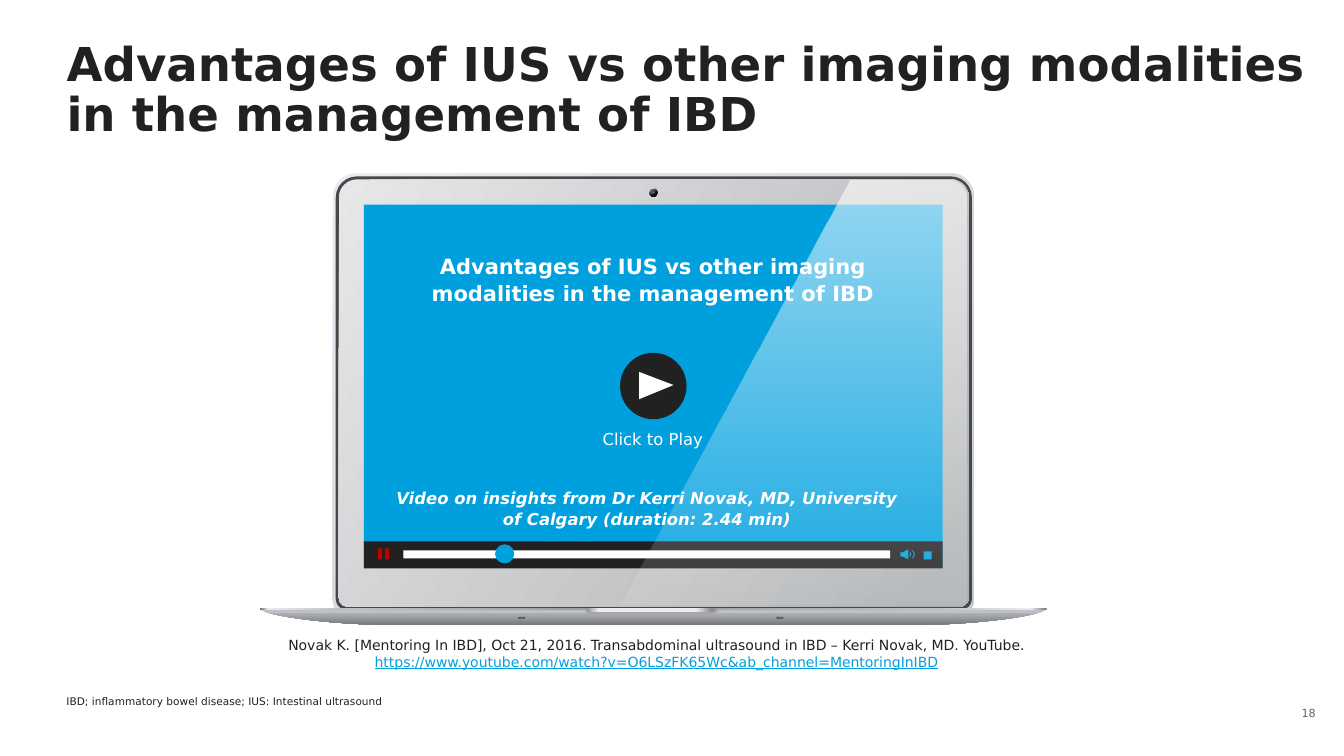
from lxml.etree import SubElement
from pptx import Presentation
from pptx.dml.color import RGBColor
from pptx.enum.shapes import MSO_SHAPE
from pptx.enum.text import MSO_ANCHOR, MSO_AUTO_SIZE, PP_ALIGN
from pptx.oxml.ns import qn
from pptx.util import Inches, Pt

# Content
FONT = "DejaVu Sans"
BLUE, BLACK, WHITE, RED = "00A0DF", "212121", "FFFFFF", "C00000"
TITLE = "Advantages of IUS vs other imaging modalities in the management of IBD"
CITATION = [
    ("Novak K. [Mentoring In IBD], Oct 21, 2016. Transabdominal ultrasound in IBD – "
     "Kerri Novak, MD. YouTube. ", {"size": 10, "color": "202124"}),
    ("https://www.youtube.com/watch?v=O6LSzFK65Wc&ab_channel=MentoringInIBD",
     {"size": 10, "color": "00A0DE", "underline": True}),
]
PAGE_TEXTS = [  # box, runs, paragraph and frame format
    ((12.73, 6.89, 0.42, 0.36), [("18", {"size": 8, "color": "646464"})],
     {"align": PP_ALIGN.RIGHT, "anchor": MSO_ANCHOR.MIDDLE}),
    ((0.66, 6.9, 9.17, 0.27),
     [("IBD; inflammatory bowel disease; IUS: Intestinal ultrasound",
       {"size": 7.5, "color": BLACK})], {"align": PP_ALIGN.LEFT, "inset": 0}),
    ((2.53, 6.27, 7.96, 0.44), CITATION, {}),
]
SCREEN_TEXTS = [
    ((4.05, 2.45, 4.85, 0.62), [(TITLE, {"size": 15, "color": WHITE, "bold": True})],
     {"spacing": 1.07}),
    ((3.74, 4.78, 5.35, 0.5),
     [("Video on insights from Dr Kerri Novak, MD, University of Calgary "
       "(duration: 2.44 min)",
       {"size": 11.7, "color": WHITE, "bold": True, "italic": True})], {"spacing": 1.07}),
    ((3.8, 4.19, 5.35, 0.29), [("Click to Play", {"size": 11.7, "color": WHITE})],
     {"spacing": 1.07}),
]

# Gradients: angle, then stops of position, colour, opacity
FRAME_FILL = (55, [(0, "E9EBF2", 100), (100, "C7C8CB", 100)])
LID_FILL = (34, [(0, "E8E7E8", 100), (95, "AFB2B4", 100)])
LENS_FILL = (54, [(27, "696969", 100), (73, "0C0C0C", 100)])
BASE_FILL = (90, [(0, "BEC1C3", 100), (100, "78797E", 100)])
EDGE_FILL = (0, [(0, "64696E", 100), (1, "E9EBF2", 100), (10, "BEC1C3", 100),
                 (46, "96989B", 100), (86, "BEC1C3", 100), (98, "E9EBF2", 100),
                 (100, "78797E", 100)])
NOTCH_FILL = (0, [(0, "8B8D90", 100), (10, "EDEEEF", 100),
                  (84, "EDEEEF", 100), (96, "8B8D90", 100)])
GLARE_FILL = (90, [(0, WHITE, 60), (100, WHITE, 10)])

# Lid: box, fill, top and bottom corner radius
LID_LAYERS = [
    ((3.3, 1.72, 6.36, 4.42), FRAME_FILL, 0.23, 0.2),
    ((3.33, 1.75, 6.31, 4.3), "47484B", 0.21, 0.11),
    ((3.36, 1.78, 6.25, 4.24), LID_FILL, 0.18, 0.09),
]
RECT, OVAL = MSO_SHAPE.RECTANGLE, MSO_SHAPE.OVAL
CAMERA_AND_EDGE = [
    (OVAL, (6.44, 1.87, 0.08, 0.08), LENS_FILL),
    (OVAL, (6.47, 1.9, 0.02, 0.02), "557DB1"),
    (RECT, (2.58, 6.03, 7.8, 0.02), EDGE_FILL),
    (RECT, (5.14, 6.12, 0.07, 0.02), "5F6265"),
    (RECT, (7.7, 6.12, 0.07, 0.02), "5F6265"),
]
PLAYER = [
    (RECT, (3.61, 2.03, 5.74, 3.6), BLUE),
    (OVAL, (6.15, 3.5, 0.66, 0.66), BLACK),
    (RECT, (3.61, 5.37, 5.74, 0.27), BLACK),
    (RECT, (4, 5.46, 4.83, 0.08), WHITE),
    (OVAL, (4.91, 5.4, 0.19, 0.19), BLUE),
    (RECT, (3.75, 5.44, 0.04, 0.11), RED),
    (RECT, (3.82, 5.44, 0.04, 0.11), RED),
    (RECT, (8.93, 5.48, 0.04, 0.04), BLUE),
    (RECT, (9.16, 5.47, 0.08, 0.08), BLUE),
]


def curve(a, b, c, d, steps=12):
    """Points along a cubic curve from a to d."""
    ts = [i / steps for i in range(steps + 1)]
    return [tuple((1 - t) ** 3 * p + 3 * (1 - t) ** 2 * t * q
                  + 3 * (1 - t) * t * t * r + t ** 3 * s
                  for p, q, r, s in zip(a, b, c, d)) for t in ts]


def notch(left, right, top, bottom):
    return ([(left, top), (right, top)]
            + curve((right, top), (right - 0.02, bottom), (right - 0.05, bottom),
                    (right - 0.09, bottom))
            + curve((left + 0.09, bottom), (left + 0.05, bottom),
                    (left + 0.02, bottom), (left, top)))


def wave(x, top, bottom, bulge):
    outer = curve((x + 0.01, top), (x + bulge, top + 0.02),
                  (x + bulge, bottom - 0.02), (x + 0.01, bottom))
    inner = curve((x, bottom), (x + bulge - 0.01, bottom - 0.02),
                  (x + bulge - 0.01, top + 0.02), (x, top))
    return outer + inner


BASE = (curve((9.09, 6.2), (9.56, 6.2), (10.25, 6.13), (10.37, 6.05))
        + curve((2.59, 6.05), (2.71, 6.13), (3.41, 6.2), (3.88, 6.2)))
BASE_LIP = [(2.59, 6.05), (10.37, 6.05), (10.31, 6.08), (2.66, 6.08)]
PLAY = [(6.34, 3.69), (6.34, 3.96), (6.68, 3.82)]
SPEAKER = [(9.01, 5.45), (8.95, 5.48), (8.95, 5.52), (9.01, 5.55)]
GLARE = ([(8.43, 1.79), (6.15, 6)]
         + curve((9.53, 6), (9.56, 6), (9.59, 5.97), (9.59, 5.94))
         + curve((9.59, 1.96), (9.59, 1.87), (9.52, 1.79), (9.43, 1.79)))

prs = Presentation()
prs.slide_width, prs.slide_height = Inches(13.33), Inches(7.5)
s = prs.slides.add_slide(prs.slide_layouts[5])


def rgb(value):
    return RGBColor.from_string(value)


def paint(sp, fill):
    sp.shadow.inherit = False
    sp.line.fill.background()
    if isinstance(fill, str):
        sp.fill.solid()
        sp.fill.fore_color.rgb = rgb(fill)
        return
    angle, stops = fill
    sp.fill.gradient()
    sp.fill.gradient_angle = -angle % 360
    stop_list = sp._element.spPr.find(qn("a:gradFill")).find(qn("a:gsLst"))
    for old in list(stop_list):
        stop_list.remove(old)
    for pos, color, opacity in stops:
        stop = SubElement(stop_list, qn("a:gs"), pos=str(pos * 1000))
        clr = SubElement(stop, qn("a:srgbClr"), val=color)
        if opacity < 100:
            SubElement(clr, qn("a:alpha"), val=str(opacity * 1000))


def add_preset(kind, box, fill):
    sp = s.shapes.add_shape(kind, *map(Inches, box))
    paint(sp, fill)
    return sp


def add_outline(points, fill):
    pts = [(Inches(x), Inches(y)) for x, y in points]
    builder = s.shapes.build_freeform(*pts[0], scale=1.0)
    builder.add_line_segments(pts[1:], close=True)
    paint(builder.convert_to_shape(), fill)


def write(sp, box, runs, fmt):
    sp.left, sp.top, sp.width, sp.height = map(Inches, box)
    tf = sp.text_frame
    tf.word_wrap, tf.auto_size = True, MSO_AUTO_SIZE.NONE
    tf.vertical_anchor = fmt.get("anchor", MSO_ANCHOR.TOP)
    if "inset" in fmt:
        for side in ("left", "right", "top", "bottom"):
            setattr(tf, "margin_" + side, Inches(fmt["inset"]))
    p = tf.paragraphs[0]
    p.alignment = fmt.get("align", PP_ALIGN.CENTER)
    p.line_spacing = fmt.get("spacing", 1.0)
    for text, style in runs:
        r = p.add_run()
        r.text = text
        r.font.name, r.font.size = FONT, Pt(style["size"])
        r.font.color.rgb = rgb(style["color"])
        for name in ("bold", "italic", "underline"):
            setattr(r.font, name, style.get(name, False))


def add_texts(items):
    for box, runs, fmt in items:
        write(s.shapes.add_textbox(0, 0, 0, 0), box, runs, fmt)


# Title and page texts
write(s.shapes.title, (0.66, 0.41, 12.59, 1.01),
      [(TITLE, {"size": 33.3, "color": BLACK, "bold": True})],
      {"align": PP_ALIGN.LEFT, "spacing": 0.9, "inset": 0})
add_texts(PAGE_TEXTS)

# Laptop lid and base
for box, fill, top_radius, bottom_radius in LID_LAYERS:
    lid = add_preset(MSO_SHAPE.ROUND_2_SAME_RECTANGLE, box, fill)
    lid.adjustments[0] = top_radius / min(box[2:])
    lid.adjustments[1] = bottom_radius / min(box[2:])
add_outline(BASE, BASE_FILL)
add_outline(BASE_LIP, "BEC1C3")
for part in CAMERA_AND_EDGE:
    add_preset(*part)
add_outline(notch(5.8, 7.13, 6.05, 6.09), "A4A6A9")
add_outline(notch(5.81, 7.11, 6.03, 6.07), NOTCH_FILL)

# Video player
for part in PLAYER:
    add_preset(*part)
add_outline(PLAY, WHITE)
for icon in (SPEAKER, wave(9.02, 5.48, 5.52, 0.02), wave(9.04, 5.46, 5.54, 0.04)):
    add_outline(icon, BLUE)
add_texts(SCREEN_TEXTS)

# Glare over the screen
add_outline(GLARE, GLARE_FILL)

prs.save("out.pptx")
